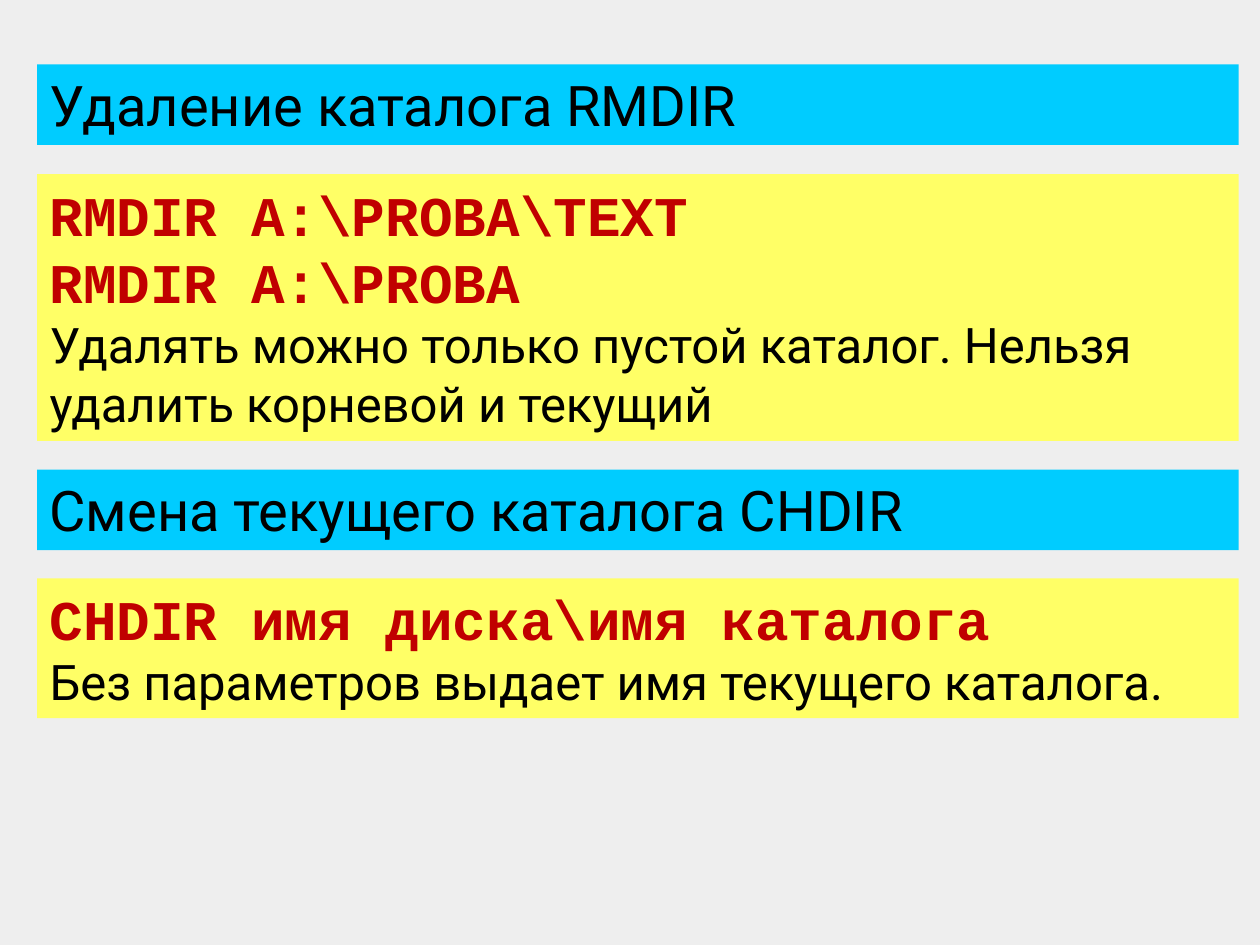
from dataclasses import dataclass

import pptx
import pptx.dml.color
import pptx.enum.shapes
import pptx.enum.text
import pptx.util

Cm = pptx.util.Cm
COLORS = {
    "back": "EEEEEE",
    "head": "00CCFF",
    "body": "FFFF66",
    "code": "C00000",
    "text": "000000",
}


@dataclass
class Style:
    font: str
    size: int
    color: str
    bold: bool = False


@dataclass
class Panel:
    top: float
    height: float
    fill: str
    lines: list[tuple[str, Style]]


HEAD = Style("Roboto", 32, "text")
CODE = Style("Courier New", 32, "code", True)
NOTE = Style("Roboto", 28, "text")

LEFT, RIGHT = 0.75, 24.97
HEAD_TALL = 1.62

PANELS = [
    Panel(1.3, HEAD_TALL, "head", [("Удаление каталога RMDIR", HEAD)]),
    Panel(3.51, 5.38, "body", [
        ("RMDIR A:\\PROBA\\TEXT", CODE),
        ("RMDIR A:\\PROBA", CODE),
        ("Удалять можно только пустой каталог. "
         "Нельзя удалить корневой и текущий", NOTE),
    ]),
    Panel(9.47, HEAD_TALL, "head", [("Смена текущего каталога CHDIR", HEAD)]),
    Panel(11.66, 2.82, "body", [
        ("CHDIR имя диска\\имя каталога", CODE),
        ("Без параметров выдает имя текущего каталога.", NOTE),
    ]),
]


def paint(fill: pptx.dml.fill.FillFormat, name: str) -> None:
    fill.solid()
    fill.fore_color.rgb = pptx.dml.color.RGBColor.from_string(COLORS[name])


def draw(slide: pptx.slide.Slide, panel: Panel) -> None:
    box = slide.shapes.add_shape(
        pptx.enum.shapes.MSO_SHAPE.RECTANGLE,
        Cm(LEFT), Cm(panel.top), Cm(RIGHT - LEFT), Cm(panel.height))
    box.shadow.inherit = False
    paint(box.fill, panel.fill)
    box.line.fill.background()

    frame = box.text_frame
    frame.word_wrap = True
    frame.auto_size = pptx.enum.text.MSO_AUTO_SIZE.SHAPE_TO_FIT_TEXT
    frame.vertical_anchor = pptx.enum.text.MSO_ANCHOR.TOP
    for i, (text, style) in enumerate(panel.lines):
        para = frame.add_paragraph() if i else frame.paragraphs[0]
        para.text = text
        para.alignment = pptx.enum.text.PP_ALIGN.LEFT
        para.font.name = style.font
        para.font.size = pptx.util.Pt(style.size)
        para.font.bold = style.bold
        paint(para.font.fill, style.color)


def main() -> None:
    # Slide and background
    deck = pptx.Presentation()
    deck.slide_width, deck.slide_height = Cm(25.4), Cm(19.05)
    slide = deck.slides.add_slide(deck.slide_layouts[6])
    paint(slide.background.fill, "back")

    # Headings and their explanations
    for panel in PANELS:
        draw(slide, panel)
    deck.save("out.pptx")


if __name__ == "__main__":
    main()
